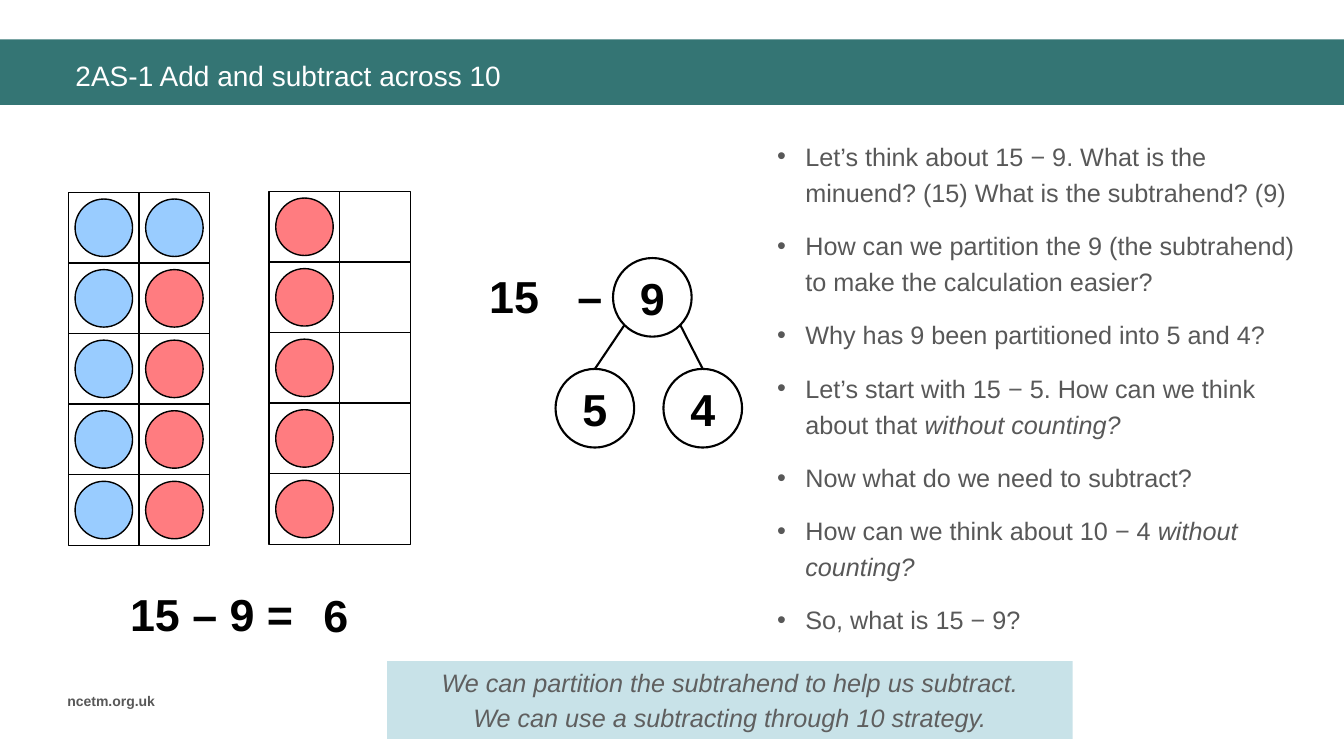
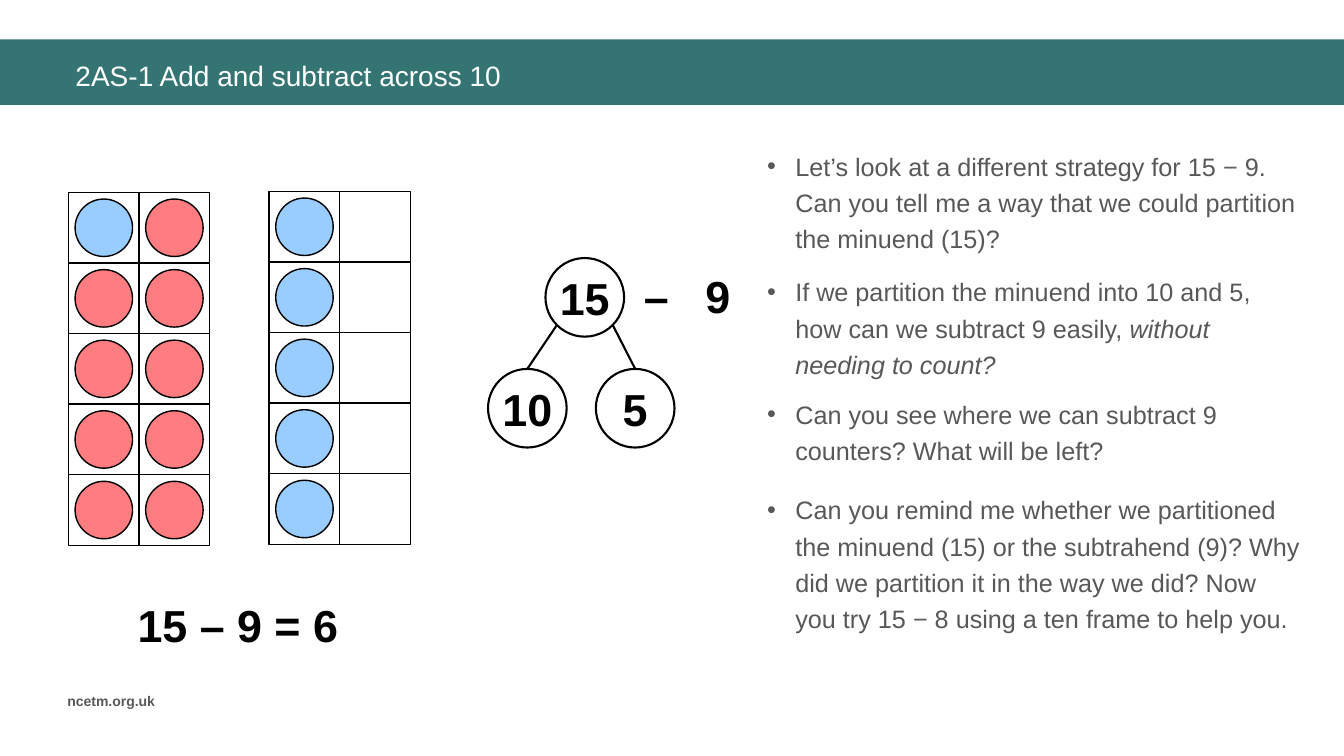
import pptx
import pptx.dml.color
import pptx.enum.shapes
import pptx.enum.text
import pptx.oxml
import pptx.util
from lxml import etree

Inches = pptx.util.Inches
Pt = pptx.util.Pt
SHAPE = pptx.enum.shapes.MSO_SHAPE
ALIGN = pptx.enum.text.PP_ALIGN
ANCHOR = pptx.enum.text.MSO_ANCHOR

FONT = "Arial"
TEAL, PALE_BLUE = "347574", "C8E2E8"
WHITE, BLACK = "FFFFFF", "000000"
GREY, MINUS_GREY = "585858", "5F5F5F"
COUNTER_COLOURS = {"B": "99CCFF", "R": "FF7C80"}

TITLE = "2AS-1 Add and subtract across 10"
FOOTER = "ncetm.org.uk"
CELL, COUNTER, CIRCLE = 0.7, 0.57, 0.78
FRAME_ROWS, FRAME_COLUMNS = 5, 2


def colour(hex_text):
    return pptx.dml.color.RGBColor.from_string(hex_text)


def add_panel(slide, kind, box, fill=None, line=None, line_width=1):
    shape = slide.shapes.add_shape(kind, *map(Inches, box))
    shape.shadow.inherit = False
    if fill:
        shape.fill.solid()
        shape.fill.fore_color.rgb = colour(fill)
    else:
        shape.fill.background()
    if line:
        shape.line.color.rgb = colour(line)
        shape.line.width = Pt(line_width)
    else:
        shape.line.fill.background()
    return shape


def add_line(slide, start, end, width=1):
    connector = slide.shapes.add_connector(
        pptx.enum.shapes.MSO_CONNECTOR.STRAIGHT, *map(Inches, (*start, *end)))
    connector.line.color.rgb = colour(BLACK)
    connector.line.width = Pt(width)
    etree.SubElement(connector._element.spPr, pptx.oxml.ns.qn("a:effectLst"))
    return connector


def style_font(paragraph, size, hex_text, bold=False, italic=False):
    font = paragraph.font
    font.name, font.size = FONT, Pt(size)
    font.bold, font.italic = bold, italic
    font.color.rgb = colour(hex_text)


def write_line(shape, text, size, hex_text, align=ALIGN.LEFT, bold=False):
    frame = shape.text_frame
    frame.word_wrap = True
    frame.vertical_anchor = ANCHOR.MIDDLE
    paragraph = frame.paragraphs[0]
    paragraph.text = text
    paragraph.alignment = align
    style_font(paragraph, size, hex_text, bold)


def add_label(slide, box, text, size, hex_text, **options):
    shape = slide.shapes.add_textbox(*map(Inches, box))
    write_line(shape, text, size, hex_text, **options)


def add_number(slide, centre_x, centre_y, text, width=0.88):
    height = 0.64
    add_label(slide, (centre_x - width / 2, centre_y - height / 2, width, height),
              text, 32, BLACK, align=ALIGN.CENTER, bold=True)


def add_base(presentation):
    slide = presentation.slides.add_slide(presentation.slide_layouts[6])
    add_panel(slide, SHAPE.RECTANGLE, (0, 0.39, 13.33, 0.65), TEAL)
    add_label(slide, (0.65, 0.51, 12.32, 0.47), TITLE, 20, WHITE)
    add_label(slide, (0.57, 6.82, 1.21, 0.27), FOOTER, 10, GREY, bold=True)
    return slide


def add_ten_frame(slide, left, top, rows):
    width, height = FRAME_COLUMNS * CELL, FRAME_ROWS * CELL
    add_panel(slide, SHAPE.RECTANGLE, (left, top, width, height), line=BLACK)
    add_line(slide, (left + CELL, top), (left + CELL, top + height))
    for row in range(1, FRAME_ROWS):
        y = top + row * CELL
        add_line(slide, (left, y), (left + width, y))
    margin = (CELL - COUNTER) / 2
    for row, counters in enumerate(rows):
        for column, counter in enumerate(counters):
            box = (left + column * CELL + margin, top + row * CELL + margin,
                   COUNTER, COUNTER)
            add_panel(slide, SHAPE.OVAL, box, COUNTER_COLOURS[counter], BLACK)


def add_bond(slide, left, top, whole, parts):
    def add_circle(x, y, text):
        circle = add_panel(slide, SHAPE.OVAL, (x, y, CIRCLE, CIRCLE),
                           WHITE, BLACK, 1.5)
        write_line(circle, text, 32, BLACK, ALIGN.CENTER, True)
        frame = circle.text_frame
        frame.word_wrap = False
        frame.margin_left = frame.margin_right = 0
        return circle

    whole_left, part_top = left + 0.57, top + 1.1
    add_circle(whole_left, top, whole)
    middle = whole_left + CIRCLE / 2
    part_lefts = (left, left + 1.07)
    for part, part_left, reach in zip(parts, part_lefts, (-0.28, 0.28)):
        circle = add_circle(part_left, part_top, part)
        branch = add_line(slide, (middle + reach, top + 0.67),
                          (part_left + CIRCLE / 2, part_top), 1.5)
        branch.end_connect(circle, 0)


def add_bullet(paragraph):
    properties = paragraph._p.get_or_add_pPr()
    properties.set("marL", str(Inches(0.28)))
    properties.set("indent", str(-Inches(0.28)))
    bullet_colour = etree.SubElement(properties, pptx.oxml.ns.qn("a:buClr"))
    etree.SubElement(bullet_colour, pptx.oxml.ns.qn("a:srgbClr")).set("val", GREY)
    etree.SubElement(properties, pptx.oxml.ns.qn("a:buFont")).set("typeface", FONT)
    etree.SubElement(properties, pptx.oxml.ns.qn("a:buChar")).set("char", "•")


def add_questions(slide, box, questions):
    frame = slide.shapes.add_textbox(*map(Inches, box)).text_frame
    frame.word_wrap = True
    for index, (plain, emphasis) in enumerate(questions):
        paragraph = frame.add_paragraph() if index else frame.paragraphs[0]
        add_bullet(paragraph)
        style_font(paragraph, 18, GREY)
        paragraph.line_spacing = 1.2
        paragraph.space_before = Pt(6 if index else 0)
        paragraph.space_after = Pt(6)
        for piece in filter(None, (*plain.partition("−"), emphasis)):
            run = paragraph.add_run()
            run.text = piece
            if piece == "−":
                run.font.color.rgb = colour(MINUS_GREY)
            if piece == emphasis:
                run.font.italic = True


def add_summary(slide, box, lines):
    frame = add_panel(slide, SHAPE.RECTANGLE, box, PALE_BLUE).text_frame
    frame.word_wrap = True
    frame.vertical_anchor = ANCHOR.MIDDLE
    for index, text in enumerate(lines):
        paragraph = frame.add_paragraph() if index else frame.paragraphs[0]
        paragraph.text = text
        paragraph.alignment = ALIGN.CENTER
        paragraph.space_before = Pt(3.6 if index else 0)
        style_font(paragraph, 18, MINUS_GREY, italic=True)


def build_subtrahend_slide(presentation):
    slide = add_base(presentation)
    add_ten_frame(slide, 0.68, 1.91, ["BB"] + ["BR"] * 4)
    add_ten_frame(slide, 2.67, 1.9, ["R"] * 5)
    add_number(slide, 5.1, 2.93, "15")
    add_number(slide, 5.85, 2.93, "–", 0.5)
    add_bond(slide, 5.51, 2.56, "9", ("5", "4"))
    add_number(slide, 2.1, 6.09, "15 – 9 =", 2.17)
    add_number(slide, 3.33, 6.1, "6")
    add_questions(slide, (7.61, 1.29, 5.43, 4.49), [
        ("Let’s think about 15 − 9. What is the minuend? (15) "
         "What is the subtrahend? (9)", ""),
        ("How can we partition the 9 (the subtrahend) to make the "
         "calculation easier?", ""),
        ("Why has 9 been partitioned into 5 and 4?", ""),
        ("Let’s start with 15 − 5. How can we think about that ",
         "without counting?"),
        ("Now what do we need to subtract?", ""),
        ("How can we think about 10 − 4 ", "without counting?"),
        ("So, what is 15 − 9?", ""),
    ])
    add_summary(slide, (3.84, 6.56, 6.8, 0.77), [
        "We can partition the subtrahend to help us subtract.",
        "We can use a subtracting through 10 strategy.",
    ])


def build_minuend_slide(presentation):
    slide = add_base(presentation)
    add_ten_frame(slide, 0.68, 1.91, ["BR"] + ["RR"] * 4)
    add_ten_frame(slide, 2.67, 1.9, ["B"] * 5)
    add_bond(slide, 4.84, 2.56, "15", ("10", "5"))
    add_number(slide, 6.51, 2.93, "–", 0.5)
    add_number(slide, 7.12, 2.93, "9", 0.5)
    add_number(slide, 2.36, 6.2, "15 – 9 = 6", 2.76)
    question_groups = [
        (1.39, 2.54, [
            ("Let’s look at a different strategy for 15 − 9. Can you tell me "
             "a way that we could partition the minuend (15)?", ""),
            ("If we partition the minuend into 10 and 5, how can we subtract "
             "9 easily, ", "without needing to count?")]),
        (3.85, 0.81, [
            ("Can you see where we can subtract 9 counters? "
             "What will be left?", "")]),
        (4.8, 1.6, [
            ("Can you remind me whether we partitioned the minuend (15) or "
             "the subtrahend (9)? Why did we partition it in the way we did? "
             "Now you try 15 − 8 using a ten frame to help you.", "")]),
    ]
    for top, height, questions in question_groups:
        add_questions(slide, (7.51, top, 5.52, height), questions)


def main():
    presentation = pptx.Presentation()
    presentation.slide_width = Inches(13.33)
    presentation.slide_height = Inches(7.5)
    build_subtrahend_slide(presentation)
    build_minuend_slide(presentation)
    presentation.save("out.pptx")


if __name__ == "__main__":
    main()
